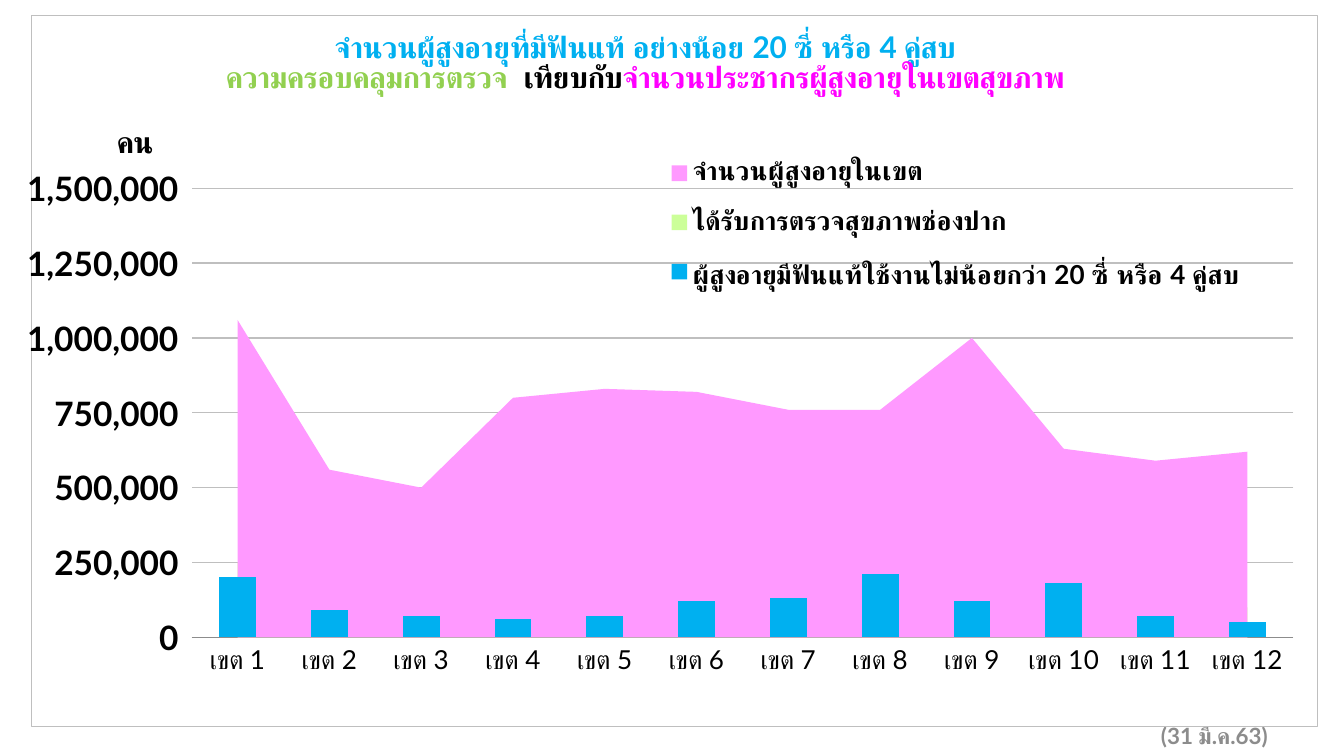
from dataclasses import dataclass

from lxml import etree
from pptx import Presentation
from pptx.chart import chart as charts, data
from pptx.dml import color
from pptx.enum import chart as kinds, text
from pptx.oxml import ns, parse_xml
from pptx.text import text as texts
from pptx.util import Emu, Pt

EMU_PER_PX = 914400 / 134.4
FONT = "Lato"
BLACK, GREY, BLUE = "000000", "BFBFBF", "00B0F0"


@dataclass(frozen=True)
class Frame:
    left: int
    top: int
    width: int = 0
    height: int = 0


@dataclass(frozen=True)
class Series:
    name: str
    fill: str
    thousands: tuple[int, ...]


@dataclass(frozen=True)
class Span:
    words: str
    hue: str


CHART = Frame(27, 15, 1291, 712)
PLOT = Frame(188, 188, 1106, 450)
LEGEND = Frame(660, 137, 590, 176)
TITLE = Frame(218, 22)
UNIT = Frame(107, 120)
DATE = Frame(968, 716, 313, 40)

SERIES = [
    Series("จำนวนผู้สูงอายุในเขต", "FF99FF",
           (1060, 560, 500, 800, 830, 820, 760, 760, 1000, 630, 590, 620)),
    Series("ได้รับการตรวจสุขภาพช่องปาก", "CCFF99",
           (250, 140, 100, 110, 150, 200, 180, 270, 180, 230, 110, 100)),
    Series("ผู้สูงอายุมีฟันแท้ใช้งานไม่น้อยกว่า 20 ซี่ หรือ 4 คู่สบ", BLUE,
           (200, 90, 70, 60, 70, 120, 130, 210, 120, 180, 70, 50)),
]
HEADING = [
    [Span("จำนวนผู้สูงอายุที่มีฟันแท้ อย่างน้อย 20 ซี่ หรือ 4 คู่สบ", BLUE)],
    [Span("ความครอบคลุมการตรวจ", "92D050"), Span("  เทียบกับ", BLACK),
     Span("จำนวนประชากรผู้สูงอายุในเขตสุขภาพ", "FF00FF")],
]


def px(length: int) -> Emu:
    return Emu(round(length * EMU_PER_PX))


def box_of(frame: Frame) -> tuple[Emu, ...]:
    return tuple(px(n) for n in (frame.left, frame.top, frame.width, frame.height))


def rgb(value: str) -> color.RGBColor:
    return color.RGBColor.from_string(value)


def style(font: texts.Font, size: int, bold: bool = True, hue: str = BLACK) -> None:
    font.name, font.size, font.bold = FONT, Pt(size), bold
    font.color.rgb = rgb(hue)


def write(frame: texts.TextFrame, lines: list[list[Span]], size: int) -> None:
    for number, line in enumerate(lines):
        paragraph = frame.add_paragraph() if number else frame.paragraphs[0]
        style(paragraph.font, size, hue=line[0].hue)
        for span in line:
            run = paragraph.add_run()
            run.text = span.words
            if len(line) > 1:
                run.font.color.rgb = rgb(span.hue)


def add_child(parent: etree._Element, tag: str, value: object) -> None:
    etree.SubElement(parent, ns.qn(tag)).set("val", str(value))


def place(element: etree._Element, frame: Frame, inner: bool = False) -> None:
    for old in element.findall(ns.qn("c:layout")):
        element.remove(old)
    layout = etree.Element(ns.qn("c:layout"))
    manual = etree.SubElement(layout, ns.qn("c:manualLayout"))
    if inner:
        add_child(manual, "c:layoutTarget", "inner")
    for mode in ("c:xMode", "c:yMode"):
        add_child(manual, mode, "edge")
    add_child(manual, "c:x", round((frame.left - CHART.left) / CHART.width, 4))
    add_child(manual, "c:y", round((frame.top - CHART.top) / CHART.height, 4))
    if frame.width:
        add_child(manual, "c:w", round(frame.width / CHART.width, 4))
        add_child(manual, "c:h", round(frame.height / CHART.height, 4))
    overlay = element.find(ns.qn("c:overlay"))
    element.insert(0 if overlay is None else element.index(overlay), layout)


def turn_last_series_into_columns(chart: charts.Chart) -> None:
    area = chart.plots[0]._element
    columns = parse_xml(
        f'<c:barChart {ns.nsdecls("c")}><c:barDir val="col"/>'
        '<c:grouping val="clustered"/><c:varyColors val="0"/></c:barChart>')
    columns.append(area.findall(ns.qn("c:ser"))[-1])
    add_child(columns, "c:gapWidth", 150)
    for axis in area.findall(ns.qn("c:axId")):
        add_child(columns, "c:axId", axis.get("val"))
    area.addnext(columns)


def format_axes(chart: charts.Chart) -> None:
    regions = chart.category_axis
    regions.major_tick_mark = kinds.XL_TICK_MARK.NONE
    regions.has_major_gridlines = False
    regions.format.line.color.rgb = rgb("8C8C8C")
    style(regions.tick_labels.font, 14, bold=False)

    people = chart.value_axis
    people.minimum_scale, people.maximum_scale = 0, 1500000
    people.major_unit = 250000
    people.major_tick_mark = kinds.XL_TICK_MARK.OUTSIDE
    people.format.line.fill.background()
    grid = people.major_gridlines.format.line
    grid.color.rgb, grid.width = rgb(GREY), Pt(0.75)
    people.tick_labels.number_format = "#,##0"
    people.tick_labels.number_format_is_linked = False
    style(people.tick_labels.font, 18)
    people._element.find(ns.qn("c:crossBetween")).set("val", "between")
    unit = people.axis_title
    write(unit.text_frame, [[Span("คน", BLACK)]], 16)
    body = unit.text_frame._txBody.find(ns.qn("a:bodyPr"))
    body.set("rot", "0")
    body.set("vert", "horz")
    place(unit._element, UNIT)


def add_border(chart: charts.Chart) -> None:
    chart._chartSpace.chart.addnext(parse_xml(
        f'<c:spPr {ns.nsdecls("c", "a")}><a:noFill/><a:ln w="{Pt(0.75)}">'
        f'<a:solidFill><a:srgbClr val="{GREY}"/></a:solidFill></a:ln></c:spPr>'))


def add_chart(page) -> None:
    numbers = data.CategoryChartData(number_format="#,##0")
    numbers.categories = [f"เขต {number}" for number in range(1, 13)]
    for series in SERIES:
        numbers.add_series(series.name, [value * 1000 for value in series.thousands])
    chart = page.shapes.add_chart(
        kinds.XL_CHART_TYPE.AREA, *box_of(CHART), numbers).chart
    chart.font.name, chart.font.size = "Calibri", Pt(11)
    chart.font.color.rgb = rgb(BLACK)
    chart.plots[0].vary_by_categories = False
    for drawn, series in zip(chart.plots[0].series, SERIES):
        drawn.format.fill.solid()
        drawn.format.fill.fore_color.rgb = rgb(series.fill)
    turn_last_series_into_columns(chart)
    format_axes(chart)
    place(chart._chartSpace.chart.plotArea, PLOT, inner=True)

    chart.has_title = True
    write(chart.chart_title.text_frame, HEADING, 16)
    place(chart.chart_title._element, TITLE)
    chart.has_legend = True
    chart.legend.position = kinds.XL_LEGEND_POSITION.BOTTOM
    chart.legend.include_in_layout = False
    style(chart.legend.font, 14)
    place(chart.legend._element, LEGEND)
    add_border(chart)


def add_date(page) -> None:
    frame = page.shapes.add_textbox(*box_of(DATE)).text_frame
    frame.word_wrap = True
    frame.vertical_anchor = text.MSO_ANCHOR.MIDDLE
    write(frame, [[Span("(31 มี.ค.63)", "8C8C8C")]], 12)
    frame.paragraphs[0].alignment = text.PP_ALIGN.RIGHT


def main() -> None:
    deck = Presentation()
    deck.slide_width, deck.slide_height = px(1344), px(756)
    page = deck.slides.add_slide(deck.slide_layouts[6])
    add_date(page)
    add_chart(page)
    deck.save("out.pptx")


if __name__ == "__main__":
    main()
